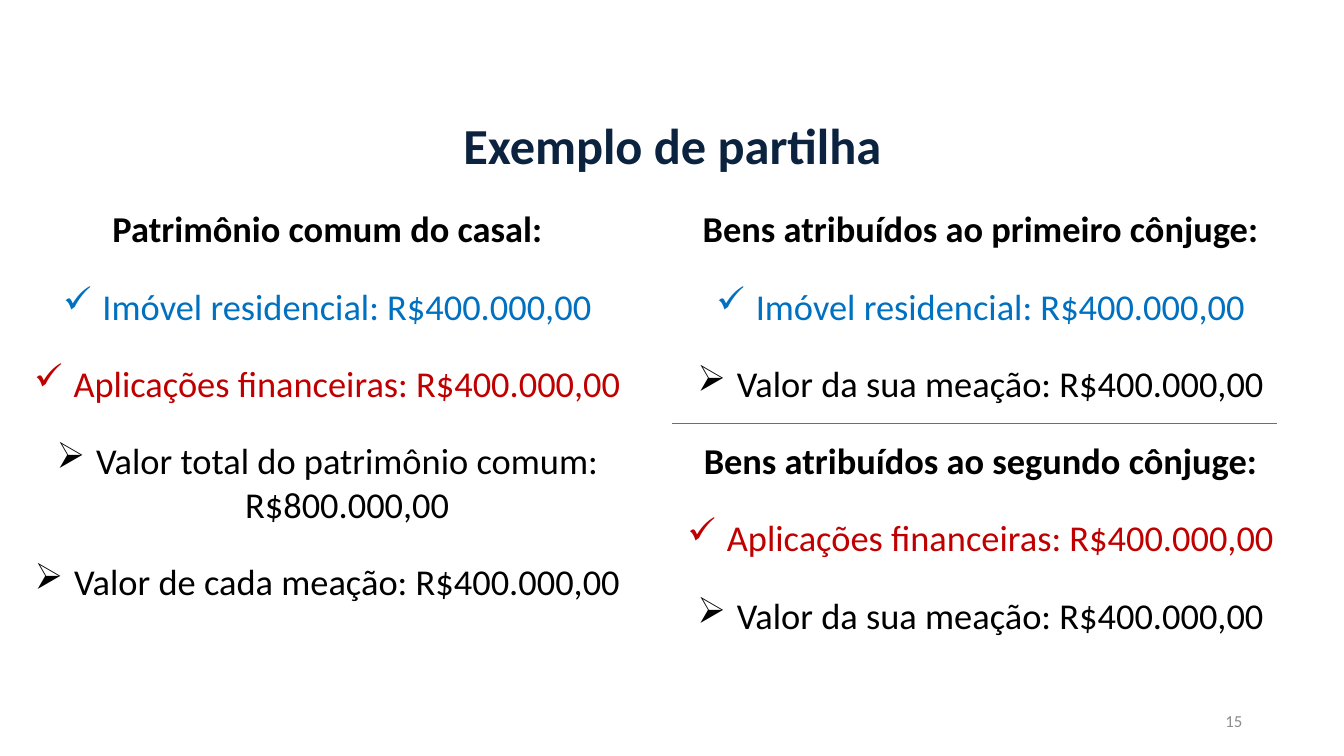
from lxml import etree
from pptx import Presentation
from pptx.dml.color import RGBColor as Rgb
from pptx.enum.shapes import MSO_CONNECTOR as Conn, MSO_SHAPE as Shape
from pptx.enum.text import MSO_ANCHOR as Anchor, PP_ALIGN as Align
from pptx.oxml.ns import qn
from pptx.util import Inches, Pt

HUES = {"white": "FFFFFF", "navy": "0B233F", "black": "000000", "blue": "0070C0",
        "red": "C00000", "gray": "8C8C8C", "line": "4472C4"}

deck = Presentation()
deck.slide_width, deck.slide_height = Inches(13.33), Inches(7.5)
slide = deck.slides.add_slide(deck.slide_layouts[6])


def style(para, size, hue, bold, align):
    para.alignment = align
    form = {"name": "Calibri", "size": Pt(size), "bold": bold}
    for key, val in form.items():
        setattr(para.font, key, val)
    para.font.color.rgb = Rgb.from_string(HUES[hue])


# Title and page number
labels = [
    ("Exemplo de partilha", (0.92, 0.74, 11.5, 1.45), 36, "navy", True, Align.CENTER),
    ("15", (9.42, 6.95, 3, 0.4), 12, "gray", False, Align.RIGHT),
]
for text, place, size, hue, bold, align in labels:
    frame = slide.shapes.add_textbox(*map(Inches, place)).text_frame
    frame.word_wrap = True
    frame.vertical_anchor = Anchor.MIDDLE
    para = frame.paragraphs[0]
    para.text = text
    style(para, size, hue, bold, align)
    if bold:
        para.line_spacing = 0.9

# Panels: headings have no bullet
house = ("✓", "Imóvel residencial: R$400.000,00", "blue")
funds = ("✓", "Aplicações financeiras: R$400.000,00", "red")
share = ("➢", "Valor da sua meação: R$400.000,00", "black")
panels = [
    (0.24, 6.02, [
        ("", "Patrimônio comum do casal:", "black"),
        house,
        funds,
        ("➢", "Valor total do patrimônio comum: R$800.000,00", "black"),
        ("➢", "Valor de cada meação: R$400.000,00", "black"),
    ]),
    (6.58, 6.3, [
        ("", "Bens atribuídos ao primeiro cônjuge:", "black"),
        house,
        share,
        ("", "Bens atribuídos ao segundo cônjuge:", "black"),
        funds,
        share,
    ]),
]
for left, width, items in panels:
    box = slide.shapes.add_shape(Shape.RECTANGLE, Inches(left), Inches(2),
                                 Inches(width), Inches(4.76))
    box.shadow.inherit = False
    box.line.fill.background()
    box.fill.solid()
    box.fill.fore_color.rgb = Rgb.from_string(HUES["white"])
    # Nearly clear fill
    tint = box.fill._xPr.find(".//" + qn("a:srgbClr"))
    etree.SubElement(tint, qn("a:alpha"), val="7000")

    frame = box.text_frame
    frame.word_wrap = True
    frame.vertical_anchor = Anchor.TOP
    for num, (mark, text, hue) in enumerate(items):
        para = frame.add_paragraph() if num else frame.paragraphs[0]
        para.text = text
        para.space_before = Pt(12 if num else 0)
        para.space_after = Pt(12)
        if mark:
            props = para._p.get_or_add_pPr()
            props.set("marL", str(Inches(0.39)))
            props.set("indent", str(-Inches(0.39)))
            etree.SubElement(props, qn("a:buChar"), char=mark)
        style(para, 26, hue, not mark, Align.CENTER)

# Rule between the two spouses
rule = slide.shapes.add_connector(Conn.STRAIGHT, Inches(6.67), Inches(4.2),
                                  Inches(12.67), Inches(4.2))
rule.line.color.rgb = Rgb.from_string(HUES["line"])
rule.line.width = Pt(0.5)
etree.SubElement(rule._element.spPr, qn("a:effectLst"))

deck.save("out.pptx")
